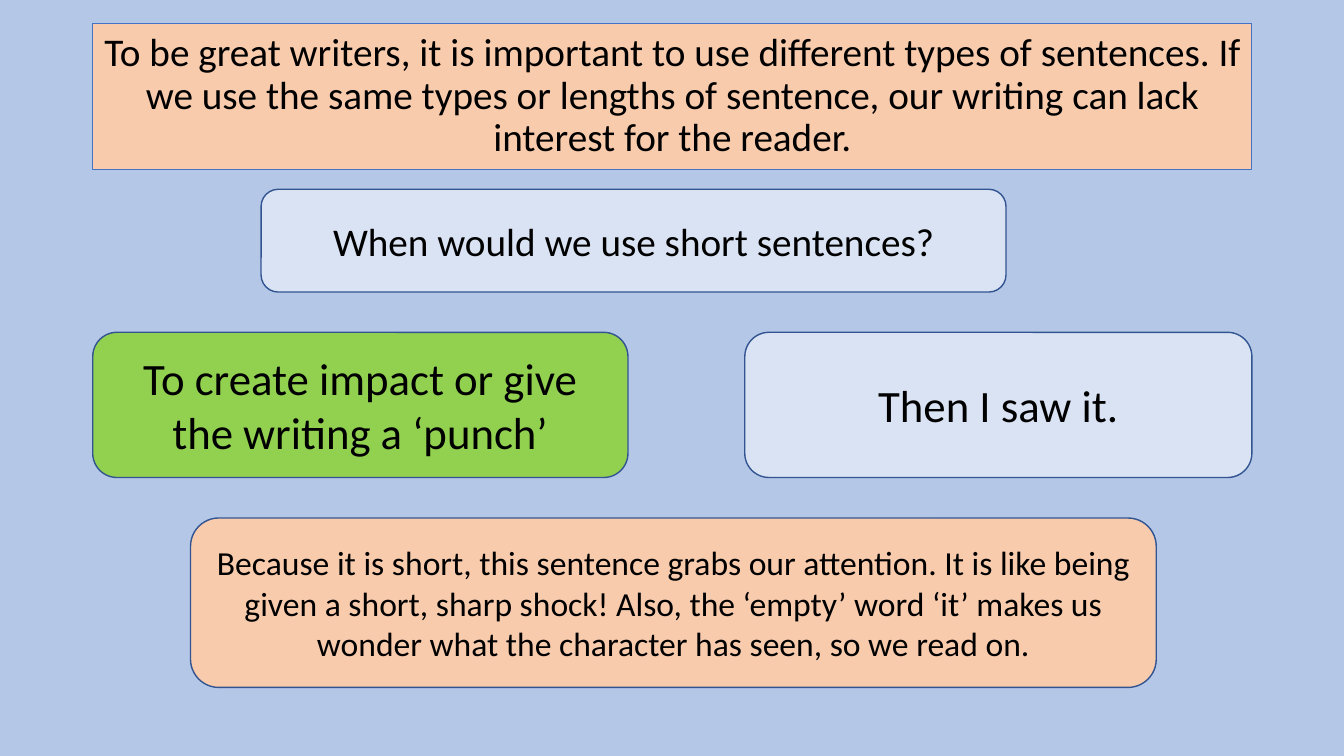
from dataclasses import dataclass

from pptx import Presentation
from pptx.dml.color import RGBColor
from pptx.enum import shapes, text
from pptx.shapes.autoshape import Shape
from pptx.util import Pt

COLORS = {
    "background": "B4C7E7",
    "peach": "F8CBAD",
    "pale": "DAE3F3",
    "green": "92D050",
    "title_line": "4472C4",
    "card_line": "325491",
    "ink": "000000",
}
LEFT, RIGHT = 66.24, 894.24
ROW_TOP, ROW_HEIGHT = 237.4, 103.7


@dataclass(frozen=True)
class Card:
    wording: str
    left: float
    top: float
    width: float
    height: float
    fill: str
    size: float
    line: str = "card_line"
    line_width: float = 1
    spacing: float = 1.0


TITLE = Card(
    "To be great writers, it is important to use different types of sentences. "
    "If we use the same types or lengths of sentence, our writing can lack "
    "interest for the reader.",
    LEFT, 16.6, RIGHT - LEFT, 104.4, "peach", 28, "title_line", 0.75, 0.9,
)
CARDS = [
    Card("When would we use short sentences?",
         186.5, 135.2, 532.1, 73.4, "pale", 28),
    Card("To create impact or give the writing a ‘punch’",
         LEFT, ROW_TOP, 382.3, ROW_HEIGHT, "green", 32),
    Card("Then I saw it.",
         RIGHT - 362.2, ROW_TOP, 362.2, ROW_HEIGHT, "pale", 32),
    Card("Because it is short, this sentence grabs our attention. It is like "
         "being given a short, sharp shock! Also, the ‘empty’ word ‘it’ makes us "
         "wonder what the character has seen, so we read on.",
         136.1, 370, 689.8, 121, "peach", 24),
]


def color(name: str) -> RGBColor:
    return RGBColor.from_string(COLORS[name])


def format_card(shape: Shape, card: Card) -> None:
    shape.left, shape.top = Pt(card.left), Pt(card.top)
    shape.width, shape.height = Pt(card.width), Pt(card.height)
    shape.fill.solid()
    shape.fill.fore_color.rgb = color(card.fill)
    shape.line.color.rgb = color(card.line)
    shape.line.width = Pt(card.line_width)
    frame = shape.text_frame
    frame.text = card.wording
    frame.word_wrap = True
    frame.auto_size = text.MSO_AUTO_SIZE.NONE
    frame.vertical_anchor = text.MSO_ANCHOR.MIDDLE
    paragraph = frame.paragraphs[0]
    paragraph.alignment = text.PP_ALIGN.CENTER
    paragraph.line_spacing = card.spacing
    paragraph.font.name = "Calibri"
    paragraph.font.size = Pt(card.size)
    paragraph.font.color.rgb = color("ink")


def main() -> None:
    deck = Presentation()
    deck.slide_width, deck.slide_height = Pt(960), Pt(540)
    slide = deck.slides.add_slide(deck.slide_layouts.get_by_name("Title Only"))
    slide.background.fill.solid()
    slide.background.fill.fore_color.rgb = color("background")
    format_card(slide.shapes.title, TITLE)
    for card in CARDS:
        shape = slide.shapes.add_shape(
            shapes.MSO_SHAPE.ROUNDED_RECTANGLE,
            Pt(card.left), Pt(card.top), Pt(card.width), Pt(card.height),
        )
        shape.shadow.inherit = False
        format_card(shape, card)
    deck.save("out.pptx")


if __name__ == "__main__":
    main()
